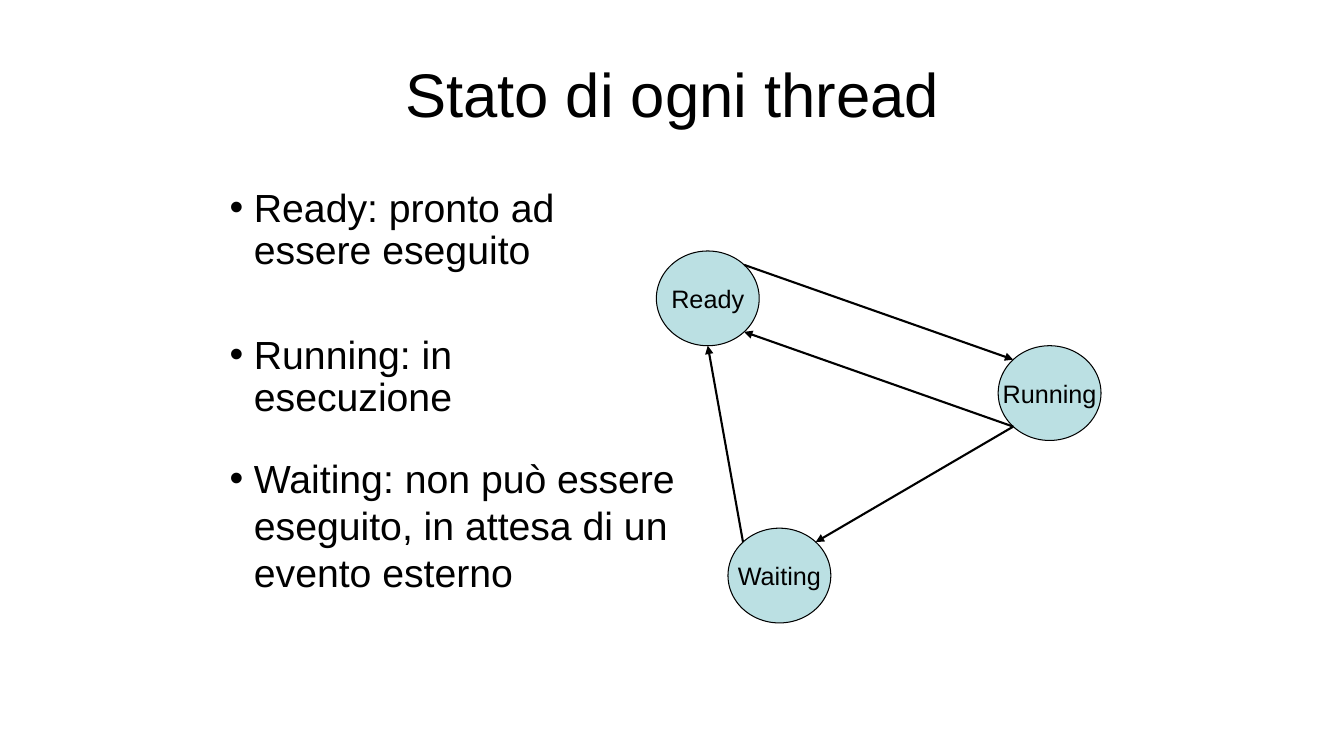
import dataclasses
import math

import lxml.etree
import pptx
import pptx.dml.color
import pptx.enum.shapes
import pptx.enum.text
import pptx.oxml.ns
import pptx.shapes.autoshape
import pptx.slide
import pptx.text.text
import pptx.util

Inches = pptx.util.Inches
Pt = pptx.util.Pt
Align = pptx.enum.text.PP_ALIGN
qn = pptx.oxml.ns.qn


@dataclasses.dataclass(frozen=True)
class Theme:
    font: str = "Arial"
    ink: pptx.dml.color.RGBColor = pptx.dml.color.RGBColor(0, 0, 0)
    state_fill: pptx.dml.color.RGBColor = pptx.dml.color.RGBColor(0xBB, 0xE0, 0xE3)
    title_size: int = 44
    body_size: int = 28
    state_size: int = 18
    outline: float = 0.75
    arrow: float = 1.5


THEME = Theme()
STATE_WIDTH = 1.02
STATE_HEIGHT = 0.94
DIAGONAL = math.sqrt(0.5)
BULLET_INDENT = 0.24


@dataclasses.dataclass(frozen=True)
class State:
    name: str
    left: float
    top: float

    def edge(self, across: float, down: float) -> tuple[float, float]:
        return (
            self.left + STATE_WIDTH / 2 * (1 + across),
            self.top + STATE_HEIGHT / 2 * (1 + down),
        )


@dataclasses.dataclass(frozen=True)
class Transition:
    start: tuple[float, float]
    end: tuple[float, float]


@dataclasses.dataclass(frozen=True)
class Definition:
    text: str
    top: float
    width: float
    height: float
    line_spacing: float = 0.9
    space_before: float = 5.6


READY = State("Ready", 6.51, 2.49)
WAITING = State("Waiting", 7.22, 5.24)
RUNNING = State("Running", 9.9, 3.43)
STATES = (READY, WAITING, RUNNING)

TRANSITIONS = (
    Transition(RUNNING.edge(-DIAGONAL, DIAGONAL), READY.edge(DIAGONAL, DIAGONAL)),
    Transition(RUNNING.edge(-DIAGONAL, DIAGONAL), WAITING.edge(DIAGONAL, -DIAGONAL)),
    Transition(READY.edge(DIAGONAL, -DIAGONAL), RUNNING.edge(-DIAGONAL, -DIAGONAL)),
    Transition(WAITING.edge(-DIAGONAL, -DIAGONAL), READY.edge(0, 1)),
)

DEFINITIONS_LEFT = 2.18
DEFINITIONS = (
    Definition("Ready: pronto ad essere eseguito", 1.82, 4.25, 0.94),
    Definition("Running: in esecuzione", 3.28, 4.39, 0.52),
    Definition("Waiting: non può essere eseguito, in attesa di un evento esterno",
               4.46, 4.88, 1.5, 1.0, 0),
)


def write(
    frame: pptx.text.text.TextFrame, text: str, size: int, align: Align
) -> pptx.text.text._Paragraph:
    frame.text = text
    para = frame.paragraphs[0]
    para.alignment = align
    font = para.runs[0].font
    font.name = THEME.font
    font.size = Pt(size)
    font.color.rgb = THEME.ink
    return para


def add_title(page: pptx.slide.Slide, text: str) -> None:
    title = page.shapes.title
    title.left, title.top = Inches(0.67), Inches(0.3)
    title.width, title.height = Inches(12), Inches(1.25)
    title.text_frame.vertical_anchor = pptx.enum.text.MSO_ANCHOR.MIDDLE
    write(title.text_frame, text, THEME.title_size, Align.CENTER)


def add_state(page: pptx.slide.Slide, state: State) -> None:
    circle = page.shapes.add_shape(
        pptx.enum.shapes.MSO_SHAPE.OVAL,
        Inches(state.left), Inches(state.top),
        Inches(STATE_WIDTH), Inches(STATE_HEIGHT),
    )
    circle.shadow.inherit = False
    circle.fill.solid()
    circle.fill.fore_color.rgb = THEME.state_fill
    circle.line.color.rgb = THEME.ink
    circle.line.width = Pt(THEME.outline)
    frame = circle.text_frame
    frame.word_wrap = False
    frame.vertical_anchor = pptx.enum.text.MSO_ANCHOR.MIDDLE
    write(frame, state.name, THEME.state_size, Align.CENTER)


def add_transition(page: pptx.slide.Slide, transition: Transition) -> None:
    arrow = page.shapes.add_connector(
        pptx.enum.shapes.MSO_CONNECTOR.STRAIGHT,
        *(Inches(value) for value in transition.start + transition.end),
    )
    arrow.line.color.rgb = THEME.ink
    arrow.line.width = Pt(THEME.arrow)
    properties = arrow.element.spPr
    line = properties.find(qn("a:ln"))
    lxml.etree.SubElement(line, qn("a:tailEnd"), type="triangle")
    lxml.etree.SubElement(properties, qn("a:effectLst"))


def add_definition(page: pptx.slide.Slide, definition: Definition) -> None:
    box = page.shapes.add_textbox(
        Inches(DEFINITIONS_LEFT), Inches(definition.top),
        Inches(definition.width), Inches(definition.height),
    )
    box.text_frame.word_wrap = True
    para = write(box.text_frame, definition.text, THEME.body_size, Align.LEFT)
    para.line_spacing = definition.line_spacing
    para.space_before = Pt(definition.space_before)
    properties = para._p.get_or_add_pPr()
    properties.set("marL", str(Inches(BULLET_INDENT)))
    properties.set("indent", str(-Inches(BULLET_INDENT)))
    lxml.etree.SubElement(properties, qn("a:buFont"), typeface=THEME.font)
    lxml.etree.SubElement(properties, qn("a:buChar"), char="•")


def main() -> None:
    deck = pptx.Presentation()
    deck.slide_width, deck.slide_height = Inches(13.33), Inches(7.5)
    page = deck.slides.add_slide(deck.slide_layouts.get_by_name("Title Only"))
    add_title(page, "Stato di ogni thread")
    for state in STATES:
        add_state(page, state)
    for transition in TRANSITIONS:
        add_transition(page, transition)
    for definition in DEFINITIONS:
        add_definition(page, definition)
    deck.save("out.pptx")


if __name__ == "__main__":
    main()
